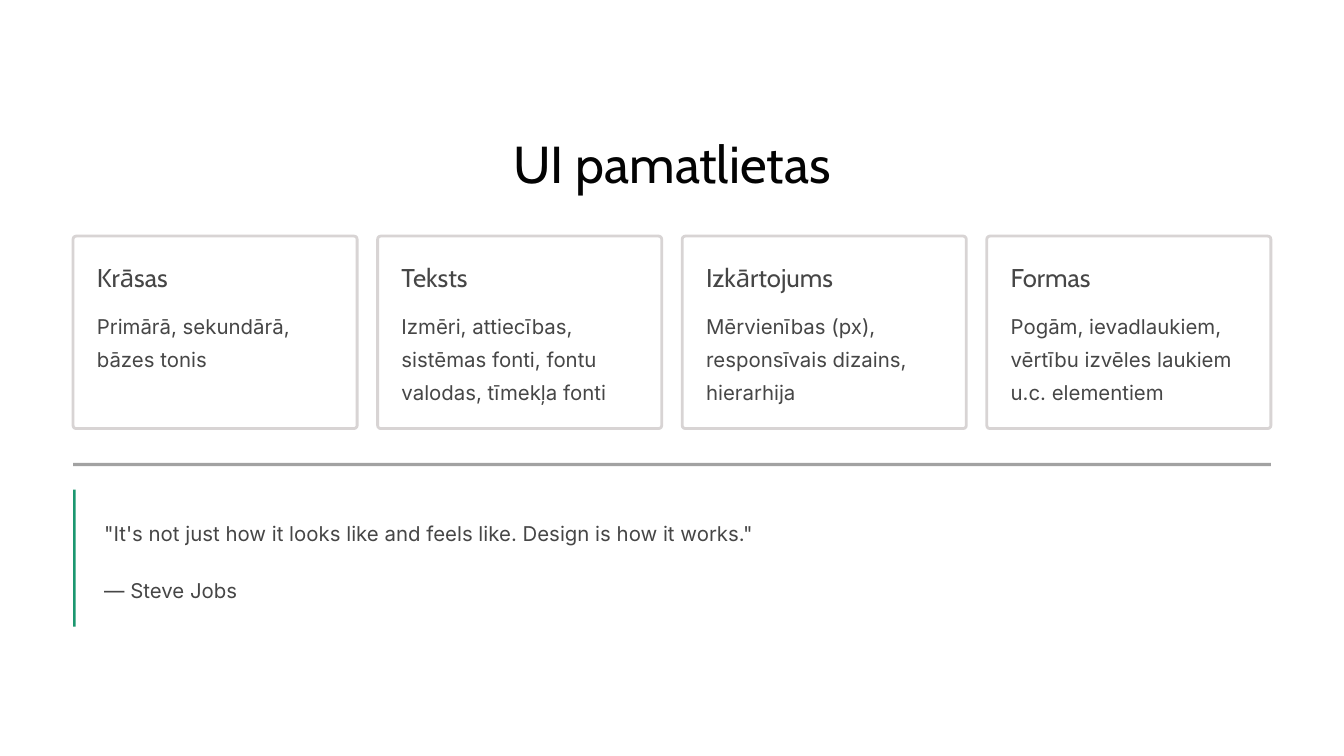
from dataclasses import dataclass

from lxml import etree
from pptx import Presentation
from pptx import util as u
from pptx.dml.color import RGBColor
from pptx.enum import shapes, text
from pptx.oxml import ns


@dataclass(frozen=True)
class TextStyle:
    font: str
    size: float
    line: float
    color: str


@dataclass(frozen=True)
class Theme:
    paper: str = "FFFFFF"
    border: str = "D8D4D4"
    rule: str = "464646"
    accent: str = "1C9770"
    title: TextStyle = TextStyle("Cabin", 44.5, 55.5, "030303")
    heading: TextStyle = TextStyle("Cabin", 22, 27.5, "464646")
    body: TextStyle = TextStyle("Inter", 17.5, 28.5, "464646")


THEME = Theme()

# Lengths in centimetres
SLIDE_WIDTH, SLIDE_HEIGHT = 40.64, 22.86
MARGIN = 2.21
CONTENT_WIDTH = SLIDE_WIDTH - 2 * MARGIN
CARD_TOP, CARD_HEIGHT, CARD_GAP, CARD_PADDING = 7.14, 5.82, 0.62, 0.72
QUOTE_LEFT = 3.15

CARDS = [
    ("Krāsas", "Primārā, sekundārā, bāzes tonis"),
    ("Teksts", "Izmēri, attiecības, sistēmas fonti, fontu valodas, tīmekļa fonti"),
    ("Izkārtojums", "Mērvienības (px), responsīvais dizains, hierarhija"),
    ("Formas", "Pogām, ievadlaukiem, vērtību izvēles laukiem u.c. elementiem"),
]
QUOTE = [
    (15.49, "\"It's not just how it looks like and feels like. Design is how it works.\""),
    (17.22, "— Steve Jobs"),
]


def add_box(slide, kind, left, top, width, height, fill):
    shape = slide.shapes.add_shape(
        kind, u.Cm(left), u.Cm(top), u.Cm(width), u.Cm(height))
    shape.shadow.inherit = False
    shape.fill.solid()
    shape.fill.fore_color.rgb = RGBColor.from_string(fill)
    shape.line.fill.background()
    return shape


def add_text(slide, left, top, width, height, words, style, wrap=False,
             align=text.PP_ALIGN.LEFT):
    box = slide.shapes.add_textbox(
        u.Cm(left), u.Cm(top), u.Cm(width), u.Cm(height))
    frame = box.text_frame
    frame.word_wrap = wrap
    frame.margin_left = frame.margin_right = 0
    frame.margin_top = frame.margin_bottom = 0
    paragraph = frame.paragraphs[0]
    paragraph.alignment = align
    paragraph.line_spacing = u.Pt(style.line)
    run = paragraph.add_run()
    run.text = words
    run.font.name = style.font
    run.font.size = u.Pt(style.size)
    run.font.color.rgb = RGBColor.from_string(style.color)


def set_opacity(shape, percent):
    color = shape.fill._xPr.find(ns.qn("a:solidFill"))[0]
    etree.SubElement(color, ns.qn("a:alpha"), val=str(percent * 1000))


def add_card(slide, left, width, heading, body):
    card = add_box(slide, shapes.MSO_SHAPE.ROUNDED_RECTANGLE,
                   left, CARD_TOP, width, CARD_HEIGHT, THEME.paper)
    card.adjustments[0] = 0.016
    card.line.color.rgb = RGBColor.from_string(THEME.border)
    card.line.width = u.Pt(2.4)
    text_left, text_width = left + CARD_PADDING, width - 2 * CARD_PADDING
    add_text(slide, text_left, 7.87, text_width, 1, heading, THEME.heading)
    add_text(slide, text_left, 9.22, text_width, 3.02, body, THEME.body, wrap=True)


def add_cards(slide):
    width = (CONTENT_WIDTH - CARD_GAP * (len(CARDS) - 1)) / len(CARDS)
    for index, (heading, body) in enumerate(CARDS):
        add_card(slide, MARGIN + index * (width + CARD_GAP), width, heading, body)


def add_divider(slide):
    divider = add_box(slide, shapes.MSO_SHAPE.RECTANGLE,
                      MARGIN, 14, CONTENT_WIDTH, 0.1, THEME.rule)
    set_opacity(divider, 50)


def add_quote(slide):
    width = SLIDE_WIDTH - MARGIN - QUOTE_LEFT
    for top, words in QUOTE:
        add_text(slide, QUOTE_LEFT, top, width, 1.01, words, THEME.body)
    add_box(slide, shapes.MSO_SHAPE.RECTANGLE,
            MARGIN, 14.81, 0.08, 4.14, THEME.accent)


def main():
    presentation = Presentation()
    presentation.slide_width = u.Cm(SLIDE_WIDTH)
    presentation.slide_height = u.Cm(SLIDE_HEIGHT)
    slide = presentation.slides.add_slide(presentation.slide_layouts[6])
    background = slide.background.fill
    background.solid()
    background.fore_color.rgb = RGBColor.from_string(THEME.paper)
    add_text(slide, MARGIN, 3.91, CONTENT_WIDTH, 1.98, "UI pamatlietas",
             THEME.title, align=text.PP_ALIGN.CENTER, wrap=True)
    add_cards(slide)
    add_divider(slide)
    add_quote(slide)
    presentation.save("out.pptx")


if __name__ == "__main__":
    main()
